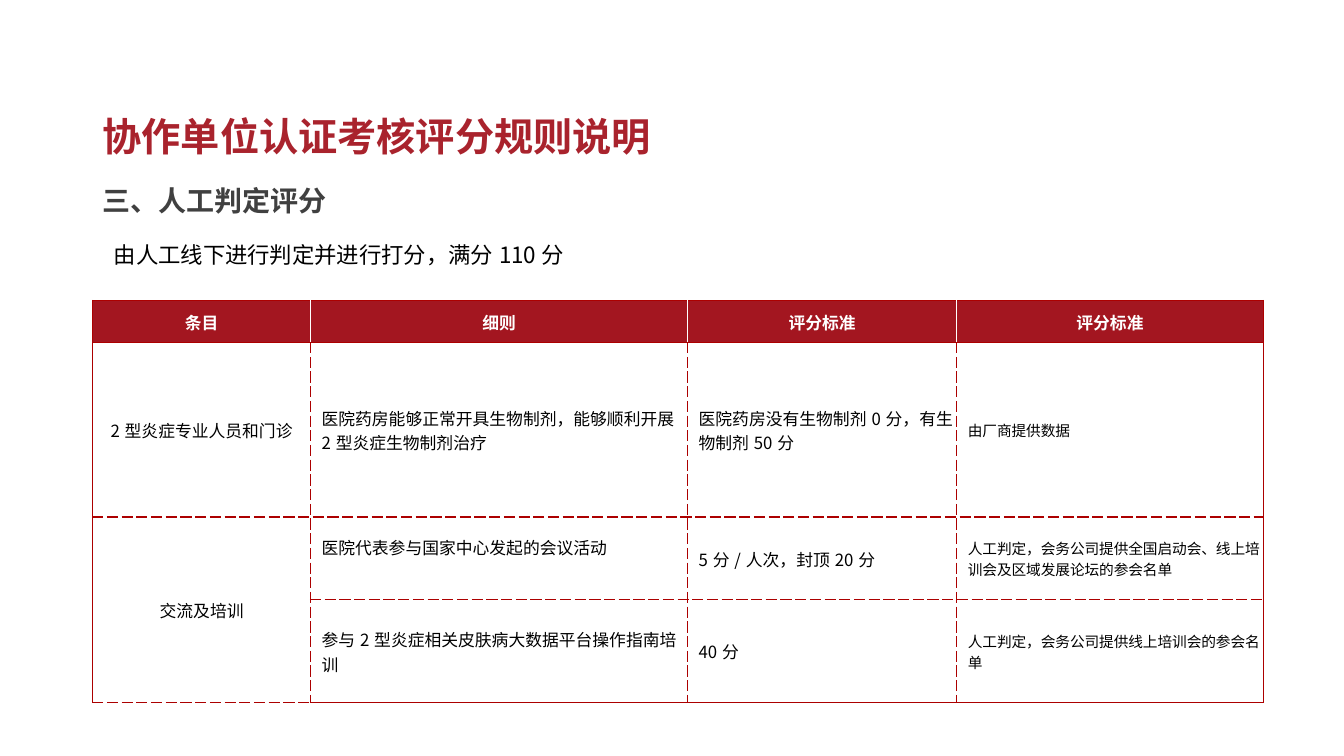
from dataclasses import dataclass
from pptx import Presentation
from pptx.dml.color import RGBColor
from pptx.enum.text import MSO_ANCHOR as Anchor, PP_ALIGN as Align
from pptx.oxml.ns import qn
from pptx.util import Inches, Pt
from lxml.etree import SubElement, Element


@dataclass(frozen=True)
class Theme:
    font: str = "Noto Sans CJK SC"
    title: str = "A9232D"
    subtitle: str = "404040"
    body: str = "000000"
    white: str = "FFFFFF"
    header: str = "A31620"
    rule: str = "AC0000"
    title_size: float = 28
    subtitle_size: float = 20
    lead_size: float = 16
    cell_size: float = 12
    note_size: float = 10.5


T = Theme()

HEADINGS = [
    ("协作单位认证考核评分规则说明", (0.92, 0.97, 6.86, 0.81), T.title_size, T.title, True, 0.9, Anchor.MIDDLE),
    ("三、人工判定评分", (0.92, 1.6, 7.27, 0.81), T.subtitle_size, T.subtitle, True, 0.9, Anchor.MIDDLE),
    ("由人工线下进行判定并进行打分，满分110分", (1.03, 2.21, 11.8, 0.46), T.lead_size, T.body, False, 1.5, Anchor.TOP),
]
ROWS = [
    ["条目", "细则", "评分标准", "评分标准"],
    ["2型炎症专业人员和门诊", "医院药房能够正常开具生物制剂，能够顺利开展2型炎症生物制剂治疗",
     "医院药房没有生物制剂0分，有生物制剂50分", "由厂商提供数据"],
    ["交流及培训", "医院代表参与国家中心发起的会议活动", "5分/人次，封顶20分",
     "人工判定，会务公司提供全国启动会、线上培训会及区域发展论坛的参会名单"],
    ["", "参与2型炎症相关皮肤病大数据平台操作指南培训", "40分", "人工判定，会务公司提供线上培训会的参会名单"],
]
COL_WIDTHS = [2.16, 3.74, 2.67, 3.04]
ROW_HEIGHTS = [0.42, 1.73, 0.82, 1.02]
TABLE_LEFT, TABLE_TOP = 0.92, 2.98
INSET, INDENT = 0.01, 0.1
RAISED = {(2, 1): 0.24}
LAST_ROW, LAST_COL = len(ROWS) - 1, len(COL_WIDTHS) - 1


def add_run(p, text, size, color, bold):
    r = p.add_run()
    r.text = text
    r.font.size = Pt(size)
    r.font.bold = bold
    r.font.color.rgb = RGBColor.from_string(color)
    r.font.name = T.font
    SubElement(r.font._element, qn("a:ea"), typeface=T.font)


def border(side, color, dash):
    ln = Element(qn(f"a:ln{side}"), w=str(Pt(1)))
    SubElement(SubElement(ln, qn("a:solidFill")), qn("a:srgbClr"), val=color)
    SubElement(ln, qn("a:prstDash"), val=dash)
    return ln


def cell_borders(row, col):
    inner = (T.white, "solid") if row == 0 else (T.rule, "sysDash")
    outer = (T.rule, "solid")
    return [
        border("L", *(outer if col == 0 else inner)),
        border("R", *(outer if col == LAST_COL else inner)),
        border("T", *(outer if row <= 1 else inner)),
        border("B", *(outer if row in (0, LAST_ROW) else inner)),
    ]


def fill_cell(cell, row, col, text):
    header = row == 0
    cell.vertical_anchor = Anchor.MIDDLE
    cell.margin_left = cell.margin_right = cell.margin_top = Inches(INSET)
    cell.margin_bottom = Inches(RAISED.get((row, col), 0))
    if header:
        cell.fill.solid()
        cell.fill.fore_color.rgb = RGBColor.from_string(T.header)
    else:
        cell.fill.background()
    tc_pr = cell._tc.get_or_add_tcPr()
    for i, ln in enumerate(cell_borders(row, col)):
        tc_pr.insert(i, ln)
    if not text:
        return
    p = cell.text_frame.paragraphs[0]
    if header or col == 0:
        p.alignment = Align.CENTER
    else:
        p.alignment = Align.LEFT
        p._p.get_or_add_pPr().set("marL", str(Inches(INDENT)))
    size = T.note_size if col == LAST_COL and not header else T.cell_size
    add_run(p, text, size, T.white if header else T.body, header)


def add_heading(slide, text, box, size, color, bold, spacing, anchor):
    tf = slide.shapes.add_textbox(*map(Inches, box)).text_frame
    tf.word_wrap = True
    tf.vertical_anchor = anchor
    p = tf.paragraphs[0]
    p.line_spacing = spacing
    add_run(p, text, size, color, bold)


def add_score_table(slide):
    frame = slide.shapes.add_table(
        len(ROWS), len(COL_WIDTHS), Inches(TABLE_LEFT), Inches(TABLE_TOP),
        Inches(sum(COL_WIDTHS)), Inches(sum(ROW_HEIGHTS)))
    table = frame.table
    table.first_row = table.horz_banding = False
    for column, width in zip(table.columns, COL_WIDTHS):
        column.width = Inches(width)
    for row, height in zip(table.rows, ROW_HEIGHTS):
        row.height = Inches(height)
    table.cell(2, 0).merge(table.cell(LAST_ROW, 0))
    for i, texts in enumerate(ROWS):
        for j, text in enumerate(texts):
            fill_cell(table.cell(i, j), i, j, text)


def main():
    prs = Presentation()
    prs.slide_width, prs.slide_height = Inches(13.33), Inches(7.5)
    slide = prs.slides.add_slide(prs.slide_layouts[6])
    for heading in HEADINGS:
        add_heading(slide, *heading)
    add_score_table(slide)
    prs.save("out.pptx")


if __name__ == "__main__":
    main()
